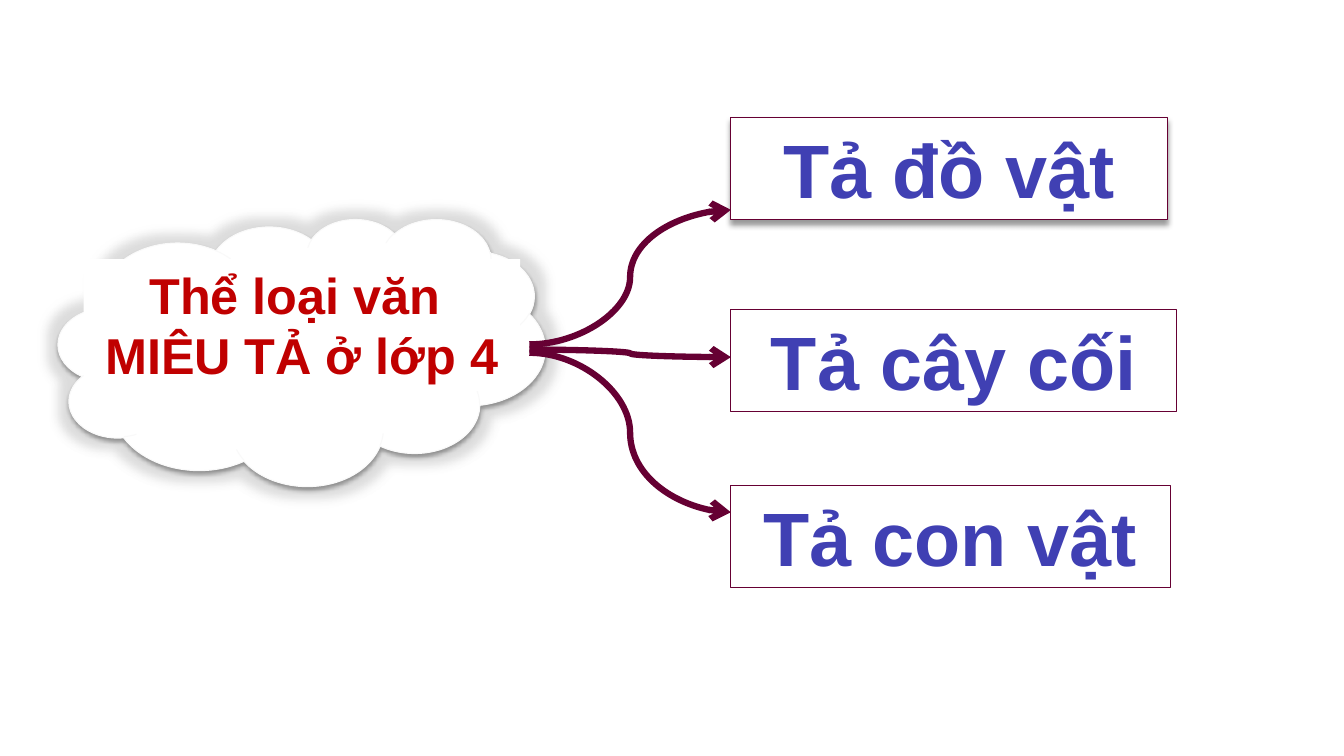
from lxml.etree import SubElement
from pptx import Presentation
from pptx.dml.color import RGBColor
from pptx.enum.shapes import MSO_CONNECTOR, MSO_SHAPE
from pptx.enum.text import MSO_ANCHOR, MSO_AUTO_SIZE, PP_ALIGN
from pptx.oxml.ns import qn
from pptx.util import Cm, Pt

COLORS = {"paper": "FFFFFF", "edge": "F9F9F9", "wine": "660033",
          "red": "C00000", "blue": "4040B3", "shadow": "000000"}


class MindMap:
    font = "Arial"

    def __init__(self, prs):
        self.s = prs.slides.add_slide(prs.slide_layouts[6])

    def color(self, name):
        return RGBColor.from_string(COLORS[name])

    def shape(self, parent, kind, box, fill=None, line=None):
        sp = parent.add_shape(kind, *[Cm(v) for v in box])
        sp.shadow.inherit = False
        if fill:
            sp.fill.solid()
            sp.fill.fore_color.rgb = self.color(fill)
        else:
            sp.fill.background()
        if line:
            sp.line.color.rgb = self.color(line)
            sp.line.width = Pt(0.75)
        else:
            sp.line.fill.background()
        return sp

    def text(self, sp, lines, size, color):
        tf = sp.text_frame
        tf.word_wrap = True
        tf.auto_size = MSO_AUTO_SIZE.SHAPE_TO_FIT_TEXT
        tf.vertical_anchor = MSO_ANCHOR.TOP
        tf.text = "\n".join(lines)
        for p in tf.paragraphs:
            p.alignment = PP_ALIGN.CENTER
            p.font.name = self.font
            p.font.size = Pt(size)
            p.font.bold = True
            p.font.color.rgb = self.color(color)

    def effect(self, sp, tag, alpha, **attrs):
        effects = sp._element.spPr.find(qn("a:effectLst"))
        node = SubElement(effects, qn(tag), {k: str(v) for k, v in attrs.items()})
        clr = SubElement(node, qn("a:srgbClr"), val=COLORS["shadow"])
        SubElement(clr, qn("a:alpha"), val=str(alpha * 1000))

    def shadow(self, sp, alpha, blur, dist):
        self.effect(sp, "a:outerShdw", alpha, blurRad=Pt(blur), dist=Pt(dist),
                    dir=5400000, rotWithShape=0)

    def topic(self, lines):
        grp = self.s.shapes.add_group_shape()
        cloud = self.shape(grp.shapes, MSO_SHAPE.CLOUD, (1.47, 5.51, 12.27, 6.73),
                           "paper", "edge")
        self.effect(cloud, "a:glow", 10, rad=Pt(14))
        self.shadow(cloud, 38, 3.1, 1.6)
        label = self.shape(grp.shapes, MSO_SHAPE.RECTANGLE, (2.11, 6.53, 11, 3.33),
                           "paper")
        self.text(label, lines, 36, "red")

    def branch(self, label, left, top, width, raised):
        sp = self.shape(self.s.shapes, MSO_SHAPE.RECTANGLE, (left, top, width, 2.57),
                        "paper" if raised else None, "wine")
        if raised:
            self.shadow(sp, 40, 4, 3)
        self.text(sp, [label], 54, "blue")

    def arrow(self, x1, y1, x2, y2):
        cx = self.s.shapes.add_connector(MSO_CONNECTOR.CURVE, Cm(x1), Cm(y1), Cm(x2), Cm(y2))
        cx.line.color.rgb = self.color("wine")
        cx.line.width = Pt(4.5)
        SubElement(cx.line._get_or_add_ln(), qn("a:tailEnd"), type="arrow")
        SubElement(cx._element.spPr, qn("a:effectLst"))


def main():
    prs = Presentation()
    prs.slide_width, prs.slide_height = Cm(33.87), Cm(19.05)
    mind_map = MindMap(prs)
    mind_map.topic(["Thể loại văn ", "MIÊU TẢ ở lớp 4"])
    hub_x, branch_x = 13.34, 18.42
    branches = [("Tả đồ vật", 2.97, 11, True, 8.68, 5.29),
                ("Tả cây cối", 7.8, 11.23, False, 8.81, 9),
                ("Tả con vật", 12.24, 11.07, False, 8.89, 12.91)]
    for label, top, width, raised, start_y, end_y in branches:
        mind_map.branch(label, branch_x, top, width, raised)
        mind_map.arrow(hub_x, start_y, branch_x, end_y)
    prs.save("out.pptx")


if __name__ == "__main__":
    main()
